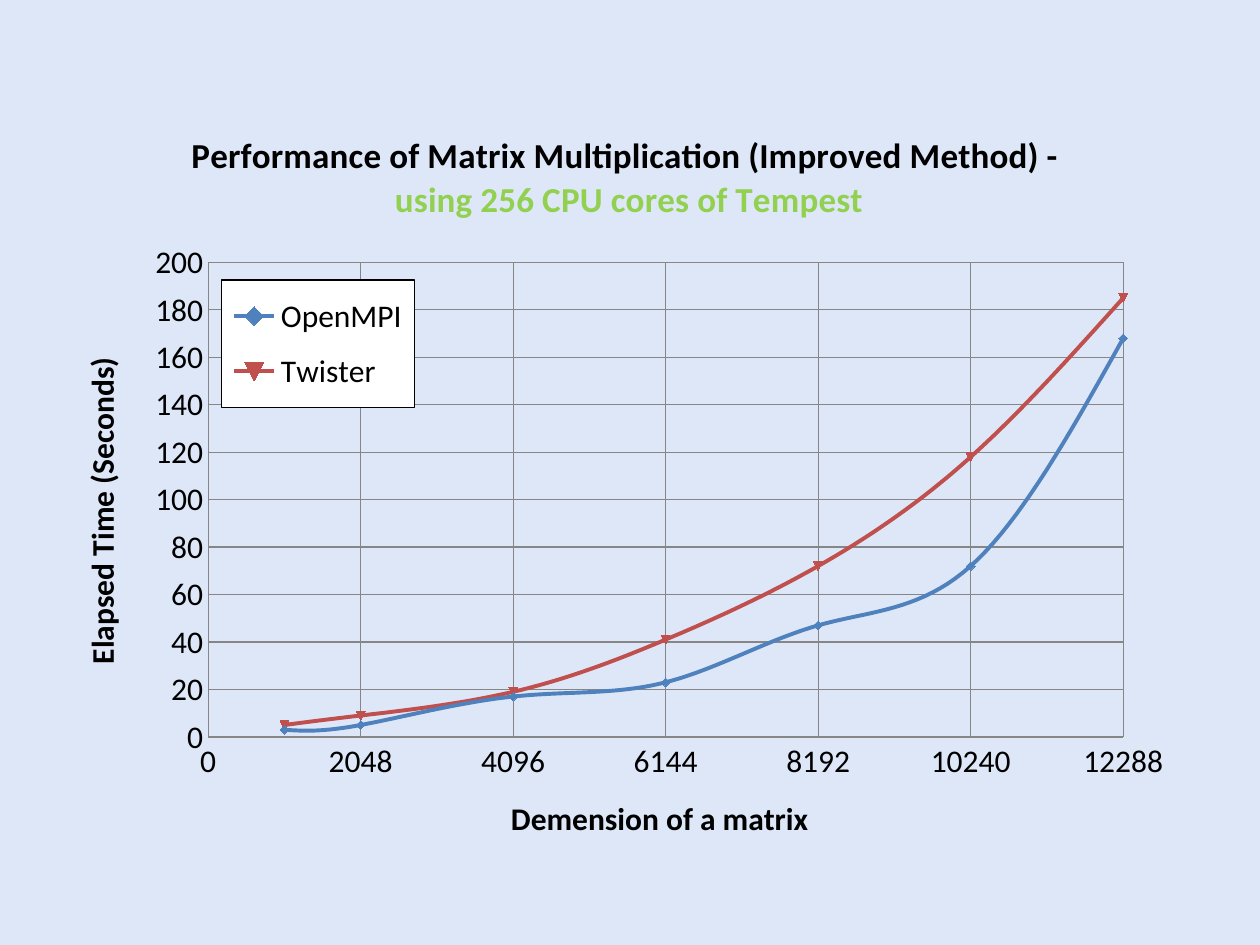
from pptx import Presentation
from pptx.chart.data import XyChartData
from pptx.dml.color import RGBColor
from pptx.enum.chart import XL_CHART_TYPE as Kind, XL_LEGEND_POSITION as Side
from pptx.enum.chart import XL_MARKER_STYLE as Mark, XL_TICK_MARK as Tick
from pptx.oxml import parse_xml
from pptx.oxml.ns import nsdecls, qn
from pptx.util import Inches, Pt

BACK = RGBColor(0xDE, 0xE7, 0xF8)
BLACK = RGBColor(0, 0, 0)
GRAY = RGBColor(0x86, 0x86, 0x86)
LIME = RGBColor(0x92, 0xD0, 0x50)
STEEL = RGBColor(0x4F, 0x81, 0xBD)
BRICK = RGBColor(0xC0, 0x50, 0x4D)
FONT = "Calibri"


def place(node, x, y, w=None, h=None, inner=False):
    """Fix a chart part at fractions of the chart's width and height."""
    for old in node.findall(qn("c:layout")):
        node.remove(old)
    tags = '<c:layoutTarget val="inner"/>' if inner else ""
    tags += '<c:xMode val="edge"/><c:yMode val="edge"/>'
    for tag, val in zip("xywh", (x, y, w, h)):
        if val is not None:
            tags += f'<c:{tag} val="{val}"/>'
    layout = parse_xml(f'<c:layout {nsdecls("c")}><c:manualLayout>{tags}'
                       '</c:manualLayout></c:layout>')
    over = node.find(qn("c:overlay"))
    node.insert(0 if over is None else node.index(over), layout)


def write(para, text, size, color):
    run = para.add_run()
    run.text = text
    font = run.font
    font.name, font.size, font.bold = FONT, Pt(size), True
    font.color.rgb = color


prs = Presentation()
prs.slide_width, prs.slide_height = Inches(10), Inches(7.5)
slide = prs.slides.add_slide(prs.slide_layouts[6])
slide.background.fill.solid()
slide.background.fill.fore_color.rgb = BACK

# Chart data
sizes = [1024] + [2048 * n for n in range(1, 7)]
times = {
    "OpenMPI": [3, 5, 17, 23, 47, 72, 168],
    "Twister": [5, 9, 19, 41, 72, 118, 185],
}
data = XyChartData()
for name, vals in times.items():
    series = data.add_series(name)
    for size, val in zip(sizes, vals):
        series.add_data_point(size, val)
chart = slide.shapes.add_chart(Kind.XY_SCATTER_SMOOTH, Inches(0.5), Inches(0.83),
                               Inches(9), Inches(6.33), data).chart
chart.font.name, chart.font.size = FONT, Pt(18)
chart.font.color.rgb = BLACK
plot = chart.plots[0]
plot.vary_by_categories = False
place(chart._chartSpace.chart.plotArea, 0.128, 0.198, 0.807, 0.595, inner=True)

# Series
looks = [(STEEL, Mark.DIAMOND), (BRICK, Mark.AUTOMATIC)]
for series, (color, mark) in zip(plot.series, looks):
    series._element.get_or_add_smooth().val = True
    series.format.line.color.rgb = color
    series.format.line.width = Pt(2.25)
    series.marker.style, series.marker.size = mark, 5
    series.marker.format.fill.solid()
    series.marker.format.fill.fore_color.rgb = color
    series.marker.format.line.color.rgb = color

# Title
chart.has_title = True
frame = chart.chart_title.text_frame
write(frame.paragraphs[0], "Performance of Matrix Multiplication (Improved Method) - ",
      20, BLACK)
write(frame.add_paragraph(), "using 256 CPU cores of Tempest", 20, LIME)
chart.chart_title.include_in_layout = False
place(chart.chart_title._element, 0.11, 0.03)

# Axes
across, up = chart.category_axis, chart.value_axis
axes = [
    (across, "Demension of a matrix", 12288, 2048, 0.39, 0.86),
    (up, "Elapsed Time (Seconds)", 200, 20, 0.01, 0.31),
]
for axis, text, top, step, x, y in axes:
    axis.minimum_scale, axis.maximum_scale, axis.major_unit = 0, top, step
    axis.major_tick_mark = axis.minor_tick_mark = Tick.NONE
    axis.has_major_gridlines = True
    for line in (axis.format.line, axis.major_gridlines.format.line):
        line.color.rgb = GRAY
        line.width = Pt(0.75)
    axis.tick_labels.number_format = "General"
    axis.tick_labels.number_format_is_linked = False
    axis.has_title = True
    write(axis.axis_title.text_frame.paragraphs[0], text, 18, BLACK)
    place(axis.axis_title._element, x, y)
turn = up.axis_title.text_frame._txBody.bodyPr
turn.set("rot", "-5400000")
turn.set("vert", "horz")

# Legend
chart.has_legend = True
legend = chart.legend
legend.position = Side.RIGHT
legend.include_in_layout = False
legend.font.name, legend.font.size = FONT, Pt(18)
legend.font.color.rgb = BLACK
place(legend._element, 0.14, 0.22, 0.17, 0.16)
legend._element.find(qn("c:overlay")).addnext(parse_xml(
    f'<c:spPr {nsdecls("c", "a")}>'
    '<a:solidFill><a:srgbClr val="FFFFFF"/></a:solidFill>'
    '<a:ln w="9525"><a:solidFill><a:srgbClr val="000000"/></a:solidFill></a:ln>'
    '</c:spPr>'))

prs.save("out.pptx")
